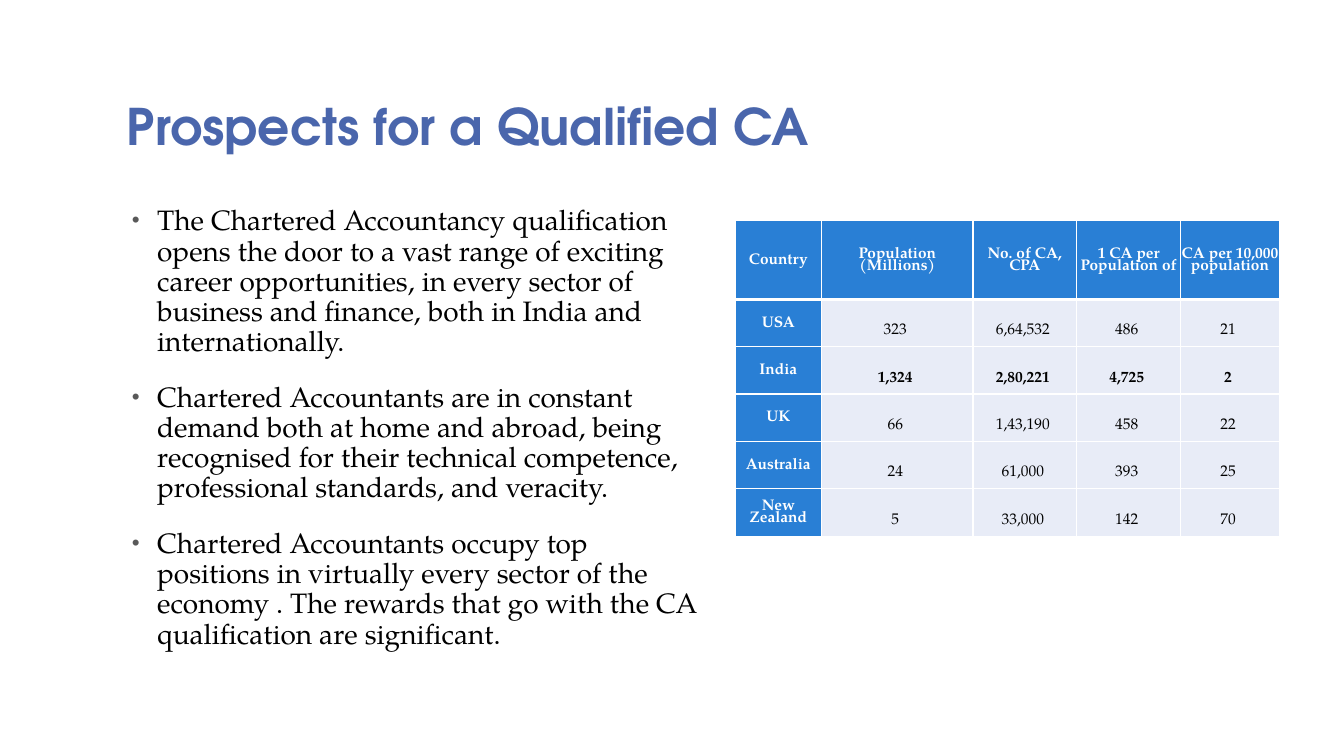
from lxml import etree
from pptx import Presentation
from pptx.dml.color import RGBColor
from pptx.enum.text import MSO_ANCHOR as Anchor, PP_ALIGN as Align
from pptx.oxml.ns import qn
from pptx.util import Inches, Pt

TITLE = "Prospects for a Qualified CA"
BULLETS = [
    "The Chartered Accountancy qualification opens the door to a vast range of exciting "
    "career opportunities, in every sector of business and finance, both in India and "
    "internationally.",
    "Chartered Accountants are in constant demand both at home and abroad, being recognised "
    "for their technical competence, professional standards, and veracity.",
    "Chartered Accountants occupy top positions in virtually every sector of the economy . "
    "The rewards that go with the CA qualification are significant.",
]
ROWS = [
    ("Country", "Population (Millions)", "No. of CA, CPA", "1 CA per Population of",
     "CA per 10,000 population"),
    ("USA", "323", "6,64,532", "486", "21"),
    ("India", "1,324", "2,80,221", "4,725", "2"),
    ("UK", "66", "1,43,190", "458", "22"),
    ("Australia", "24", "61,000", "393", "25"),
    ("New Zealand", "5", "33,000", "142", "70"),
]
HIGHLIGHT = "India"
COL_WIDTHS = [0.86, 1.5, 1.03, 1.03, 0.98]
HEADER_HEIGHT, ROW_HEIGHT = 0.78, 0.47

HEADING_FONT, BODY_FONT = "TeX Gyre Adventor", "TeX Gyre Pagella"
INDIGO = RGBColor(0x4A, 0x66, 0xAC)
BLUE = RGBColor(0x29, 0x7F, 0xD5)
PALE = RGBColor(0xE8, 0xEC, 0xF7)
BLACK = RGBColor(0, 0, 0)
WHITE = RGBColor(255, 255, 255)


def write(p, text, size, color, font=BODY_FONT, bold=False, align=Align.LEFT,
          spacing=0.9, before=0):
    p.alignment, p.line_spacing, p.space_before = align, spacing, Pt(before)
    r = p.add_run()
    r.text = text
    r.font.name, r.font.size, r.font.bold = font, Pt(size), bold
    r.font.color.rgb = color


def add_box(s, left, top, width, height, anchor=Anchor.TOP):
    tf = s.shapes.add_textbox(*map(Inches, (left, top, width, height))).text_frame
    tf.word_wrap, tf.vertical_anchor = True, anchor
    return tf


def add_bullet(p):
    pPr = p._p.get_or_add_pPr()
    pPr.set("marL", str(Inches(0.3)))
    pPr.set("indent", str(Inches(-0.25)))
    color = etree.SubElement(pPr, qn("a:buClr"))
    etree.SubElement(color, qn("a:srgbClr"), val="595959")
    etree.SubElement(pPr, qn("a:buSzPct"), val="80000")
    etree.SubElement(pPr, qn("a:buFont"), typeface="Arial")
    etree.SubElement(pPr, qn("a:buChar"), char="•")


def set_borders(cell, **widths):
    """White cell borders; widths in points by side letter, in L, R, T, B order."""
    tcPr = cell._tc.get_or_add_tcPr()
    for side, width in widths.items():
        ln = etree.SubElement(tcPr, qn(f"a:ln{side}"), w=str(Pt(width)))
        fill = etree.SubElement(ln, qn("a:solidFill"))
        etree.SubElement(fill, qn("a:srgbClr"), val=str(WHITE))


def add_country_table(s, left, top):
    height = HEADER_HEIGHT + ROW_HEIGHT * (len(ROWS) - 1)
    table = s.shapes.add_table(len(ROWS), len(COL_WIDTHS), Inches(left), Inches(top),
                               Inches(sum(COL_WIDTHS)), Inches(height)).table
    for column, width in zip(table.columns, COL_WIDTHS):
        column.width = Inches(width)
    for i, values in enumerate(ROWS):
        table.rows[i].height = Inches(ROW_HEIGHT if i else HEADER_HEIGHT)
        for j, value in enumerate(values):
            cell = table.cell(i, j)
            label = i == 0 or j == 0
            set_borders(cell, L=1, R=1, T=3 if i == 1 else 1, B=1 if i else 3)
            cell.fill.solid()
            cell.fill.fore_color.rgb = BLUE if label else PALE
            cell.vertical_anchor = Anchor.MIDDLE
            cell.margin_left = Inches(0.01)
            cell.margin_right = Inches(0.01 if label else 0.05)
            cell.margin_top = Inches(0.01 if label else 0.16)
            cell.margin_bottom = 0
            write(cell.text_frame.paragraphs[0], value, 11, WHITE if label else BLACK,
                  bold=label or values[0] == HIGHLIGHT, align=Align.CENTER, spacing=0.8)


prs = Presentation()
prs.slide_width, prs.slide_height = Inches(13.33), Inches(7.5)
s = prs.slides.add_slide(prs.slide_layouts[6])

body = add_box(s, 1.16, 2, 5.89, 5.19)
for i, text in enumerate(BULLETS):
    p = body.add_paragraph() if i else body.paragraphs[0]
    add_bullet(p)
    write(p, text, 20, BLACK, before=18 if i else 0)

title = add_box(s, 1.16, 0.42, 9.5, 1.17, Anchor.BOTTOM)
write(title.paragraphs[0], TITLE, 36, INDIGO, font=HEADING_FONT, bold=True, spacing=0.8)

add_country_table(s, 7.29, 2.19)

prs.save("out.pptx")
